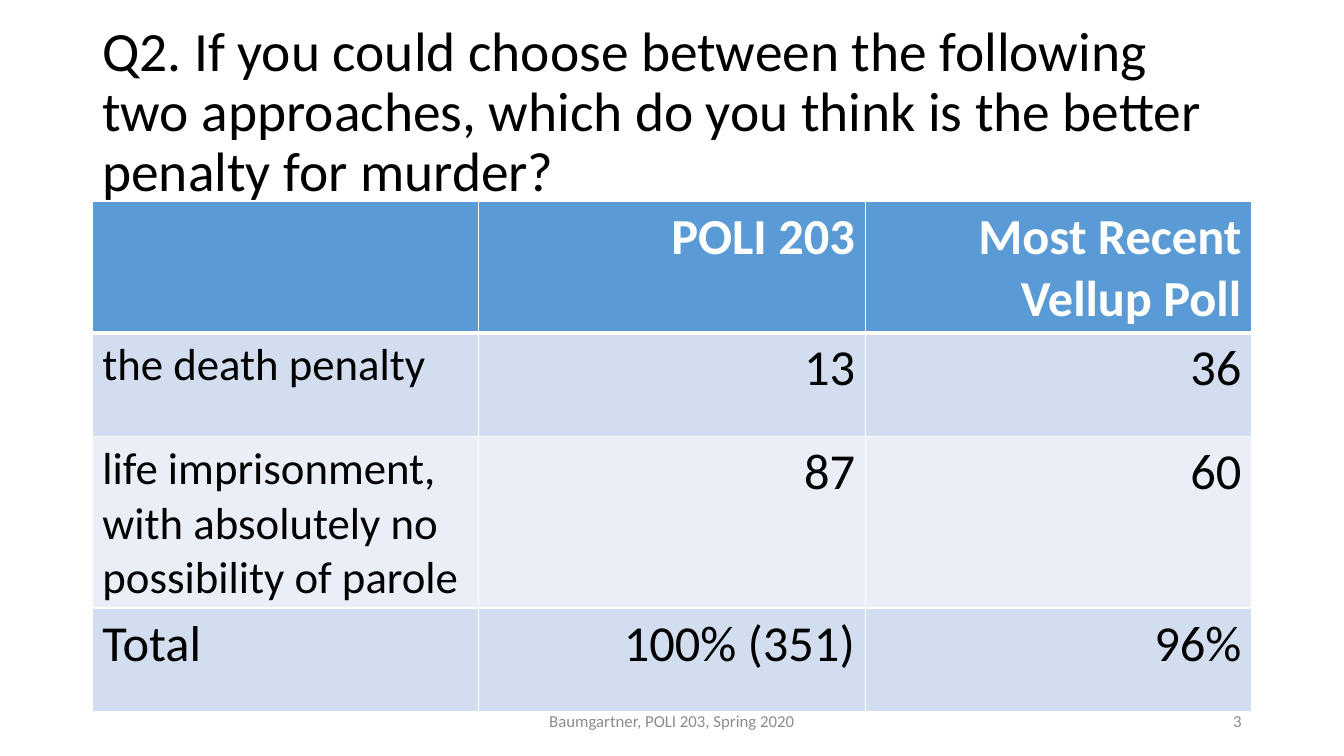
import pptx
import pptx.util
import pptx.dml.color
import pptx.enum.text
import pptx.oxml
import pptx.oxml.ns
from lxml import etree

Pt = pptx.util.Pt
RGB = pptx.dml.color.RGBColor.from_string
ALIGN = pptx.enum.text.PP_ALIGN
MIDDLE = pptx.enum.text.MSO_ANCHOR.MIDDLE
qn = pptx.oxml.ns.qn

COLORS = {"black": "000000", "white": "FFFFFF", "grey": "8C8C8C",
          "header": "5B9BD5", "odd": "D2DEEF", "even": "EAEFF7"}
TITLE = ("Q2. If you could choose between the following two approaches, "
         "which do you think is the better penalty for murder?")
ROWS = [
    ("", "POLI 203", "Most Recent Vellup Poll"),
    ("the death penalty", "13", "36"),
    ("life imprisonment, with absolutely no possibility of parole", "87", "60"),
    ("Total", "100% (351)", "96%"),
]
LABEL_SIZES = [36, 32, 32, 36]
ROW_FILLS = ["header", "odd", "even", "odd"]
COL_WIDTH, ROW_HEIGHT = 276, 74.2


def write(tf, text, color, align=ALIGN.LEFT, spacing=None, **font):
    p = tf.paragraphs[0]
    p.alignment = align
    if spacing:
        p.line_spacing = spacing
    r = p.add_run()
    r.text = text
    r.font.color.rgb = RGB(COLORS[color])
    for name, value in {"name": "Calibri", **font}.items():
        setattr(r.font, name, value)


def add_text(s, box, text, color, **style):
    tf = s.shapes.add_textbox(*map(Pt, box)).text_frame
    tf.word_wrap = True
    tf.vertical_anchor = MIDDLE
    write(tf, text, color, **style)


def set_borders(cell, widths):
    """Draw white borders; widths maps L, R, T, B to points."""
    props = cell._tc.get_or_add_tcPr()
    for i, (side, width) in enumerate(widths.items()):
        ln = etree.Element(qn(f"a:ln{side}"), w=str(Pt(width)))
        fill = etree.SubElement(ln, qn("a:solidFill"))
        etree.SubElement(fill, qn("a:srgbClr"), val=COLORS["white"])
        props.insert(i, ln)


def add_poll_table(s, left, top):
    n_rows, n_cols = len(ROWS), len(ROWS[0])
    table = s.shapes.add_table(n_rows, n_cols, Pt(left), Pt(top),
                               Pt(COL_WIDTH * n_cols),
                               Pt(ROW_HEIGHT * n_rows)).table
    for col in table.columns:
        col.width = Pt(COL_WIDTH)
    for i, row in enumerate(ROWS):
        table.rows[i].height = Pt(ROW_HEIGHT)
        for j, text in enumerate(row):
            cell = table.cell(i, j)
            cell.fill.solid()
            cell.fill.fore_color.rgb = RGB(COLORS[ROW_FILLS[i]])
            set_borders(cell, {"L": 1, "R": 1, "T": 3 if i == 1 else 1,
                               "B": 3 if i == 0 else 1})
            if text:
                write(cell.text_frame, text, "black" if i else "white",
                      align=ALIGN.RIGHT if j else ALIGN.LEFT,
                      size=Pt(36 if j else LABEL_SIZES[i]), bold=i == 0)


def main():
    prs = pptx.Presentation()
    prs.slide_width, prs.slide_height = Pt(960), Pt(540)
    s = prs.slides.add_slide(prs.slide_layouts[6])
    add_text(s, (66, 28.75, 828, 104.4), TITLE, "black",
             spacing=0.9, size=Pt(39.6))
    add_poll_table(s, 66, 144)
    add_text(s, (318, 500.5, 324, 28.75), "Baumgartner, POLI 203, Spring 2020",
             "grey", align=ALIGN.CENTER, size=Pt(12))
    add_text(s, (678, 500.5, 216, 28.75), "3", "grey",
             align=ALIGN.RIGHT, size=Pt(12))
    prs.save("out.pptx")


if __name__ == "__main__":
    main()
